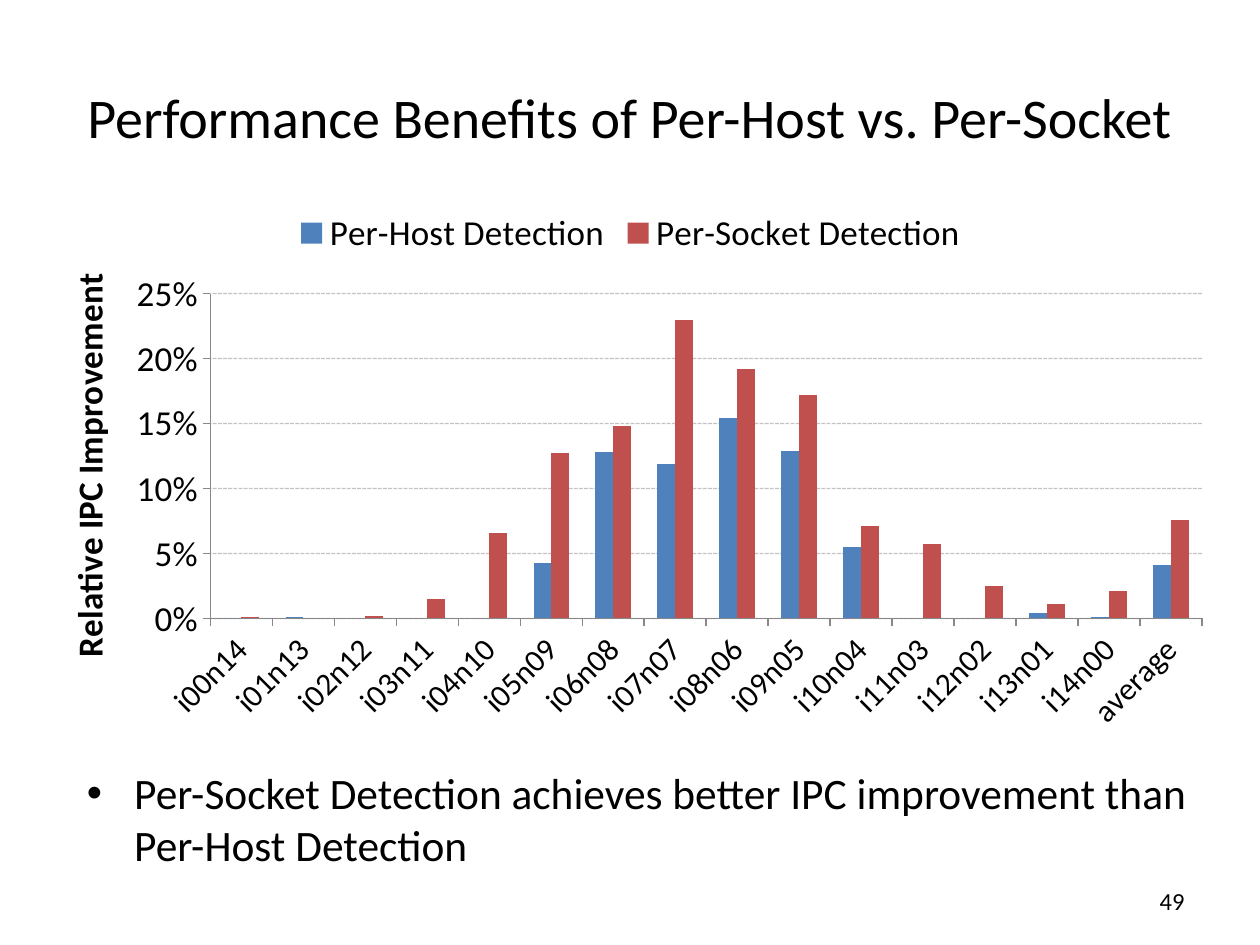
from lxml import etree
from pptx import Presentation
from pptx.chart.data import CategoryChartData as ChartData
from pptx.dml.color import RGBColor as RGB
from pptx.enum.chart import XL_CHART_TYPE as Kind, XL_LEGEND_POSITION as Spot
from pptx.enum.dml import MSO_LINE as Dash
from pptx.enum.text import MSO_ANCHOR as Anchor, MSO_AUTO_SIZE as Fit, PP_ALIGN as Align
from pptx.oxml import parse_xml
from pptx.oxml.ns import nsdecls, qn
from pptx.util import Inches, Pt

FONT = "Calibri"
COLORS = {"text": "000000", "host": "4F81BD", "socket": "C0504D", "line": "888888"}

TITLE = "Performance Benefits of Per-Host vs. Per-Socket"
POINT = "Per-Socket Detection achieves better IPC improvement than Per-Host Detection"
PAGE = "49"
AXIS = "Relative IPC Improvement"
CATS = [f"i{n:02}n{14 - n:02}" for n in range(15)] + ["average"]
SERIES = [
    ("Per-Host Detection", "host",
     (0, 0.001, -0.003, -0.005, 0, 0.043, 0.128, 0.119,
      0.154, 0.129, 0.055, -0.004, -0.001, 0.004, 0.001, 0.041)),
    ("Per-Socket Detection", "socket",
     (0.001, -0.001, 0.002, 0.015, 0.066, 0.127, 0.148, 0.23,
      0.192, 0.172, 0.071, 0.057, 0.025, 0.011, 0.021, 0.076)),
]
CHART = (0.28, 1.55, 9.45, 4.33)
PLOT = (1.39, 0.78, 7.87, 2.58)  # inches inside the chart
LABEL = (0.18, 0.57)  # axis title, inches inside the chart


def color(name):
    return RGB.from_string(COLORS[name])


def style(font, size, bold=False):
    font.name, font.size, font.bold = FONT, Pt(size), bold
    font.color.rgb = color("text")


def write(shape, text, box, size, align=Align.LEFT, anchor=Anchor.TOP):
    shape.left, shape.top, shape.width, shape.height = map(Inches, box)
    frame = shape.text_frame
    frame.word_wrap, frame.auto_size = True, Fit.NONE
    frame.vertical_anchor = anchor
    par = frame.paragraphs[0]
    par.alignment = align
    run = par.add_run()
    run.text = text
    style(run.font, size)


def place(part, spot, index, target=""):
    """Fix a chart part at a spot given in inches inside the chart."""
    for old in part.findall(qn("c:layout")):
        part.remove(old)
    tags = "".join(f'<c:{k}Mode val="edge"/>' for k in "xy")
    tags += "".join(f'<c:{k} val="{v / full}"/>'
                    for k, v, full in zip("xywh", spot, CHART[2:] * 2))
    part.insert(index, parse_xml(
        f'<c:layout {nsdecls("c")}><c:manualLayout>{target}{tags}'
        f'</c:manualLayout></c:layout>'))


def add_bars(slide):
    data = ChartData(number_format="0%")
    data.categories = CATS
    for name, _, vals in SERIES:
        data.add_series(name, vals)
    chart = slide.shapes.add_chart(
        Kind.COLUMN_CLUSTERED, *map(Inches, CHART), data).chart
    style(chart.font, 10)
    chart.has_title = False

    chart.has_legend = True
    chart.legend.position = Spot.TOP
    chart.legend.include_in_layout = False
    style(chart.legend.font, 20)

    plot = chart.plots[0]
    plot.gap_width, plot.overlap, plot.vary_by_categories = 150, 0, False
    for bar, (_, key, _) in zip(plot.series, SERIES):
        bar.invert_if_negative = False
        bar.format.fill.solid()
        bar.format.fill.fore_color.rgb = color(key)

    cat, val = chart.category_axis, chart.value_axis
    for axis, size in ((cat, 18), (val, 20)):
        style(axis.tick_labels.font, size)
        axis.format.line.color.rgb = color("line")
        axis.format.line.width = Pt(0.75)
    body = cat._element.find(qn("c:txPr")).find(qn("a:bodyPr"))
    body.set("rot", "-2700000")
    body.set("vert", "horz")

    val.minimum_scale, val.maximum_scale, val.major_unit = 0, 0.25, 0.05
    val.tick_labels.number_format = "0%"
    val.tick_labels.number_format_is_linked = False
    val.has_title = True
    run = val.axis_title.text_frame.paragraphs[0].add_run()
    run.text = AXIS
    style(run.font, 20, bold=True)

    val.has_major_gridlines = True
    grid = val.major_gridlines.format.line
    grid.color.rgb = color("line")
    grid.width, grid.dash_style = Pt(0.75), Dash.SQUARE_DOT
    lines = val._element.find(qn("c:majorGridlines"))
    tint = next(lines.iter(qn("a:srgbClr")))
    etree.SubElement(tint, qn("a:alpha")).set("val", "50000")

    place(plot._element.getparent(), PLOT, 0, '<c:layoutTarget val="inner"/>')
    place(val._element.find(qn("c:title")), LABEL, 1)


def main():
    deck = Presentation()
    deck.slide_width, deck.slide_height = Inches(10), Inches(7.5)
    slide = deck.slides.add_slide(deck.slide_layouts[1])
    write(slide.shapes.title, TITLE, (0.5, 0.3, 9, 1.25), 32,
          align=Align.CENTER, anchor=Anchor.MIDDLE)
    add_bars(slide)
    write(slide.placeholders[1], POINT, (0.59, 6.03, 9, 0.79), 24.8)
    page = slide.shapes.add_textbox(0, 0, 0, 0)
    write(page, PAGE, (7.17, 6.95, 2.33, 0.4), 14,
          align=Align.RIGHT, anchor=Anchor.MIDDLE)
    deck.save("out.pptx")


if __name__ == "__main__":
    main()
